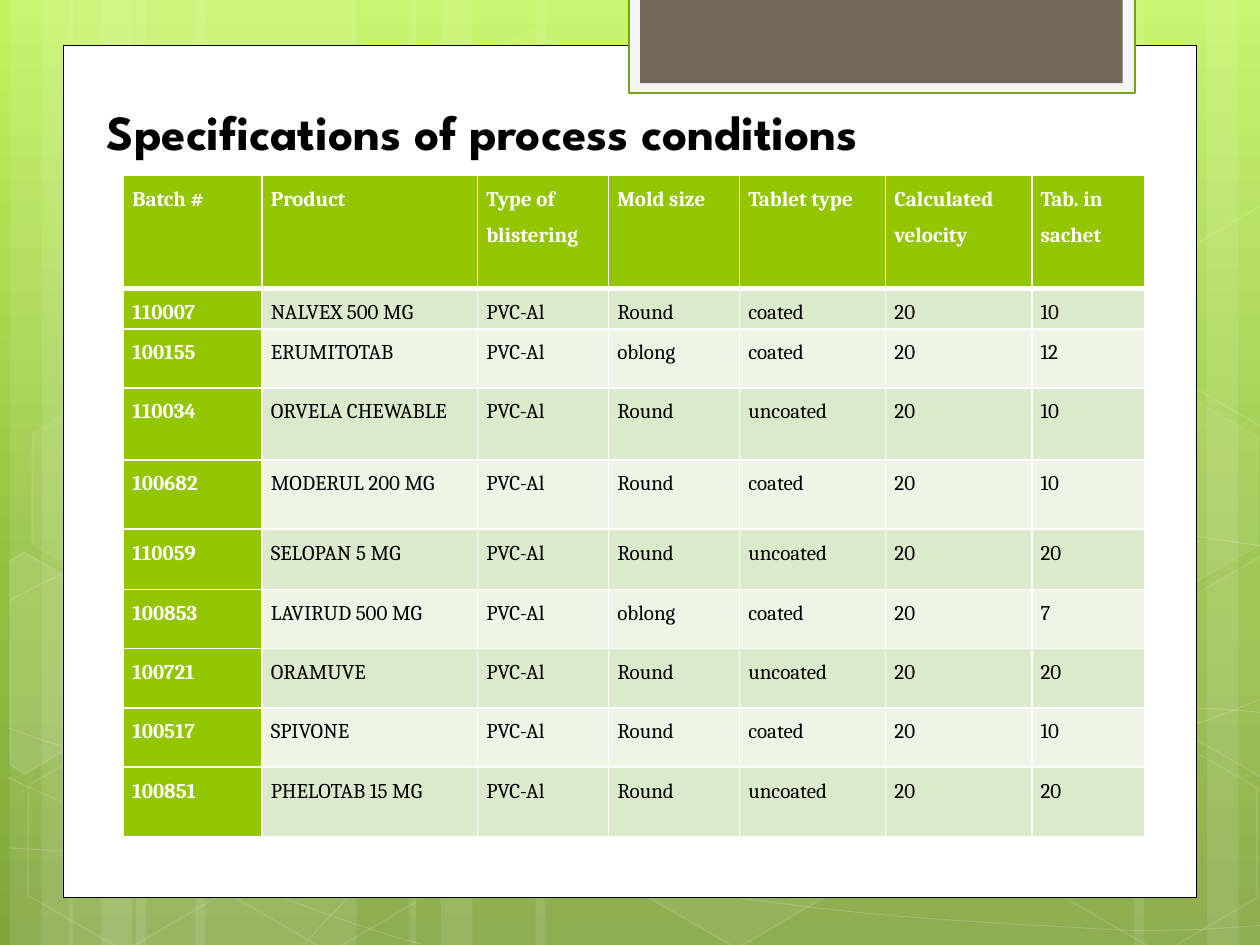
import copy
import math

import lxml.etree
import pptx
import pptx.dml.color
import pptx.enum.shapes
import pptx.oxml.ns
import pptx.util

Inches, Pt = pptx.util.Inches, pptx.util.Pt
RGB = pptx.dml.color.RGBColor
KIND = pptx.enum.shapes.MSO_SHAPE
qn = pptx.oxml.ns.qn

WHITE, BLACK = RGB(0xFF, 0xFF, 0xFF), RGB(0, 0, 0)
GREEN, EDGE = RGB(0x94, 0xC6, 0x00), RGB(0x74, 0xA5, 0x10)
PALE, BROWN = RGB(0xF5, 0xF5, 0xF5), RGB(0x71, 0x68, 0x5A)
STRIPES = (RGB(0xDC, 0xEA, 0xCC), RGB(0xEE, 0xF5, 0xE7))
SKY = ((0, RGB(0xC3, 0xF3, 0x5F)), (0.62, RGB(0x93, 0xBF, 0x3F)), (1, RGB(0x81, 0xA5, 0x3E)))

BANDS = ((1.08, 1.75), (0.08, 0.5), (0.33, 0.83), (1.55, 1.75), (0.55, 0.5), (0.8, 0.83),
         (7.33, 1.75), (9.58, 0.5), (9, 0.83), (4.25, 3.08), (3.25, 0.5), (3.5, 0.83))
CURVES = (
    ((0.07, 6.73), (0.61, 6.76), (1.15, 6.79), (1.9, 6.78), (2.65, 6.77), (3.58, 6.75), (4.58, 6.65),
     (5.58, 6.55), (7, 6.36), (7.92, 6.17), (8.83, 5.98), (9.77, 5.68), (10.07, 5.51)),
    ((0.07, 4.77), (0.36, 4.61), (0.65, 4.46), (1.21, 4.31), (1.78, 4.16), (2.59, 3.94), (3.47, 3.87),
     (4.36, 3.8), (5.44, 3.79), (6.54, 3.87), (7.64, 3.95), (9.47, 4.26), (10.07, 4.34)),
    ((0.06, 6.17), (1.27, 6.72), (2.47, 7.27), (3.34, 7.49)),
    ((0.07, 5.78), (0.38, 5.89), (0.7, 6), (1.28, 6.16), (1.86, 6.31), (2.73, 6.56), (3.57, 6.73),
     (4.4, 6.9), (5.45, 7.08), (6.28, 7.18), (7.11, 7.29), (8, 7.33), (8.53, 7.36), (9.05, 7.4),
     (9.19, 7.38), (9.45, 7.38), (9.71, 7.37), (9.89, 7.35), (10.07, 7.34)),
    ((2.42, 7.49), (2.6, 7.29), (2.78, 7.09), (3.02, 6.91), (3.26, 6.73), (3.6, 6.53), (3.88, 6.39),
     (4.16, 6.25), (4.33, 6.19), (4.7, 6.09), (5.06, 5.99), (5.73, 5.85), (6.08, 5.78), (6.44, 5.71),
     (6.49, 5.71), (6.8, 5.69), (7.11, 5.66), (7.6, 5.63), (7.94, 5.62), (8.29, 5.61), (8.86, 5.62),
     (8.86, 5.62), (9.08, 5.62), (9.31, 5.62), (9.53, 5.62), (9.71, 5.63), (9.88, 5.64), (10.06, 5.66)))
HEXES = ((3.34, 0.36, 4, 8), (4.97, 5.89, 6, 12), (0.11, 5.91, 0, 12), (0.14, 3.12, 7, 8),
         (1.74, 5.92, 0, 12), (7.53, 4.53, 10, 12), (8.34, 5.93, 0, 12), (8.34, 3.14, 7, 8))
CLIPS = (
    ((0.36, 5.35), 10, ((0.08, 4.45), (0.19, 4.38), (0.96, 4.82), (0.95, 5.7), (0.2, 6.14), (0.08, 6.07))),
    ((9.85, 5.2), 4, ((9.26, 4.85), (10.01, 4.41), (10.09, 4.46), (10.09, 6.13), (10.02, 6.17), (9.26, 5.73))),
    ((9.85, 2.41), 0, ((9.26, 2.07), (10.01, 1.63), (10.1, 1.68), (10.09, 3.35), (10.02, 3.39), (9.26, 2.95))))

HEAD = ("Batch #", "Product", "Type of blistering", "Mold size", "Tablet type",
        "Calculated velocity", "Tab. in sachet")
BATCHES = (("110007", "NALVEX 500 MG", "Round", "coated", "10"),
           ("100155", "ERUMITOTAB", "oblong", "coated", "12"),
           ("110034", "ORVELA CHEWABLE", "Round", "uncoated", "10"),
           ("100682", "MODERUL 200 MG", "Round", "coated", "10"),
           ("110059", "SELOPAN 5 MG", "Round", "uncoated", "20"),
           ("100853", "LAVIRUD 500 MG", "oblong", "coated", "7"),
           ("100721", "ORAMUVE", "Round", "uncoated", "20"),
           ("100517", "SPIVONE", "Round", "coated", "10"),
           ("100851", "PHELOTAB 15 MG", "Round", "uncoated", "20"))
COLS = (1.1, 1.71, 1.04, 1.04, 1.16, 1.16, 0.9)
ROWS = (0.9, 0.32, 0.47, 0.57, 0.55, 0.48, 0.47, 0.47, 0.47, 0.55)


def put(frame, text, size=12, font="Cambria", color=BLACK, bold=False, lead=None, after=None):
    """Write one formatted paragraph into a text frame."""
    para = frame.paragraphs[0]
    para.line_spacing = lead
    if after:
        para.space_after = Pt(after)
    run = para.add_run()
    run.text = text
    run.font.size, run.font.name, run.font.bold = Pt(size), font, bold
    run.font.color.rgb = color


def paint(shape, fill=None, line=None, width=1, alpha=100, glow=100):
    """Set the fill, line and opacities in percent of a shape."""
    shape.shadow.inherit = False
    shape.fill.background()
    shape.line.fill.background()
    if fill is not None and alpha:
        shape.fill.solid()
        shape.fill.fore_color.rgb = fill
    if line is not None:
        shape.line.color.rgb = line
        shape.line.width = Pt(width)
    for query, value in (("a:solidFill/a:srgbClr", alpha), ("a:ln/a:solidFill/a:srgbClr", glow)):
        for tone in shape.element.spPr.xpath(query):
            if value < 100:
                lxml.etree.SubElement(tone, qn("a:alpha"), val=str(value * 1000))


def block(slide, kind, box, **style):
    """Add a painted preset shape."""
    shape = slide.shapes.add_shape(kind, *map(Inches, box))
    paint(shape, **style)
    return shape


def trace(slide, box, points, close, **style):
    """Add a painted outline through points relative to a box."""
    spots = [(Inches(box[0] + x), Inches(box[1] + y)) for x, y in points]
    form = slide.shapes.build_freeform(*spots[0], scale=1.0)
    form.add_line_segments(spots[1:], close=close)
    shape = form.convert_to_shape()
    paint(shape, **style)
    return shape


def bend(shape):
    """Turn each three line segments of an outline into a cubic curve."""
    lines = shape.element.xpath(".//a:lnTo")
    for i in range(0, len(lines), 3):
        curve = lxml.etree.Element(qn("a:cubicBezTo"))
        lines[i].addprevious(curve)
        for line in lines[i:i + 3]:
            curve.append(line[0])
            line.getparent().remove(line)


def turn(points, mid, angle):
    """Return points rotated about a middle by degrees."""
    cos, sin = math.cos(math.radians(angle)), math.sin(math.radians(angle))
    return [(mid[0] + (x - mid[0]) * cos - (y - mid[1]) * sin,
             mid[1] + (x - mid[0]) * sin + (y - mid[1]) * cos) for x, y in points]


def shade(slide):
    """Fill the background with a vertical gradient."""
    fill = slide.background.fill
    fill.gradient()
    fill.gradient_angle = 270
    stops = slide.element.xpath(".//a:gsLst")[0]
    stops.append(copy.deepcopy(stops[0]))
    for stop, (place, color) in zip(fill.gradient_stops, SKY):
        stop.position, stop.color.rgb = place, color


def decor(slide, box):
    """Draw the translucent bands, curves and hexagons."""
    left, top, _, high = box
    for x, wide in BANDS:
        block(slide, KIND.RECTANGLE, (left + x, top, wide, high), fill=WHITE, alpha=10)
    for knots in CURVES:
        bend(trace(slide, box, knots, False, line=WHITE, width=0.5, glow=20))
    for x, y, alpha, glow in HEXES:
        cell = block(slide, KIND.HEXAGON, (left + x, top + y, 1.75, 1.52),
                     fill=WHITE, alpha=alpha, line=WHITE, glow=glow)
        cell.adjustments[0] = 0.285
        cell.rotation = 30
    for mid, alpha, points in CLIPS:
        cell = trace(slide, box, turn(points, mid, -30), True, fill=WHITE, alpha=alpha, line=WHITE, glow=12)
        cell.rotation = 30


def panel(slide, box):
    """Draw the white page, its top tab and the title."""
    left, top, _, _ = box
    block(slide, KIND.RECTANGLE, box, fill=WHITE, line=BLACK, width=0.5)
    block(slide, KIND.RECTANGLE, (left + 4.49, top - 0.38, 4.02, 0.76), fill=PALE, line=EDGE, width=1.25)
    block(slide, KIND.RECTANGLE, (left + 4.58, top - 0.38, 3.83, 0.68), fill=BROWN)
    title = slide.shapes.add_textbox(*map(Inches, (left + 0.25, top + 0.4, 6.99, 0.57)))
    title.text_frame.word_wrap = False
    put(title.text_frame, "Specifications of process conditions", size=28, font="League Spartan", bold=True)


def rule(cell, **widths):
    """Draw white borders on a cell, given in points by side."""
    for side in "LRTB":
        line = lxml.etree.SubElement(cell._tc.get_or_add_tcPr(), qn("a:ln" + side),
                                     w=str(Pt(widths.get(side, 1))))
        fill = lxml.etree.SubElement(line, qn("a:solidFill"))
        lxml.etree.SubElement(fill, qn("a:srgbClr"), val=str(WHITE))


def grid(slide, box):
    """Build the table of batches."""
    data = [HEAD] + [(code, name, "PVC-Al", mold, kind, "20", count)
                     for code, name, mold, kind, count in BATCHES]
    table = slide.shapes.add_table(len(ROWS), len(COLS), *map(Inches, box)).table
    for col, wide in zip(table.columns, COLS):
        col.width = Inches(wide)
    for r, (row, high) in enumerate(zip(table.rows, ROWS)):
        row.height = Inches(high)
        for c, cell in enumerate(row.cells):
            key = r == 0 or c == 0
            rule(cell, B=3 if r == 0 else 1, T=3 if r == 1 else 1)
            cell.fill.solid()
            cell.fill.fore_color.rgb = GREEN if key else STRIPES[(r - 1) % 2]
            cell.margin_left = cell.margin_right = Inches(0.07)
            cell.margin_top = cell.margin_bottom = 0
            put(cell.text_frame, data[r][c], color=WHITE if key else BLACK, bold=key,
                lead=1.5, after=10 if r > 1 and c in (3, 5) else None)


deck = pptx.Presentation()
deck.slide_width, deck.slide_height = Inches(10), Inches(7.5)
page = deck.slides.add_slide(deck.slide_layouts[6])
shade(page)
decor(page, (0, 0, 10, 7.5))
panel(page, (0.5, 0.36, 9, 6.76))
grid(page, (0.98, 1.39, 8.11, 5.25))
deck.save("out.pptx")
